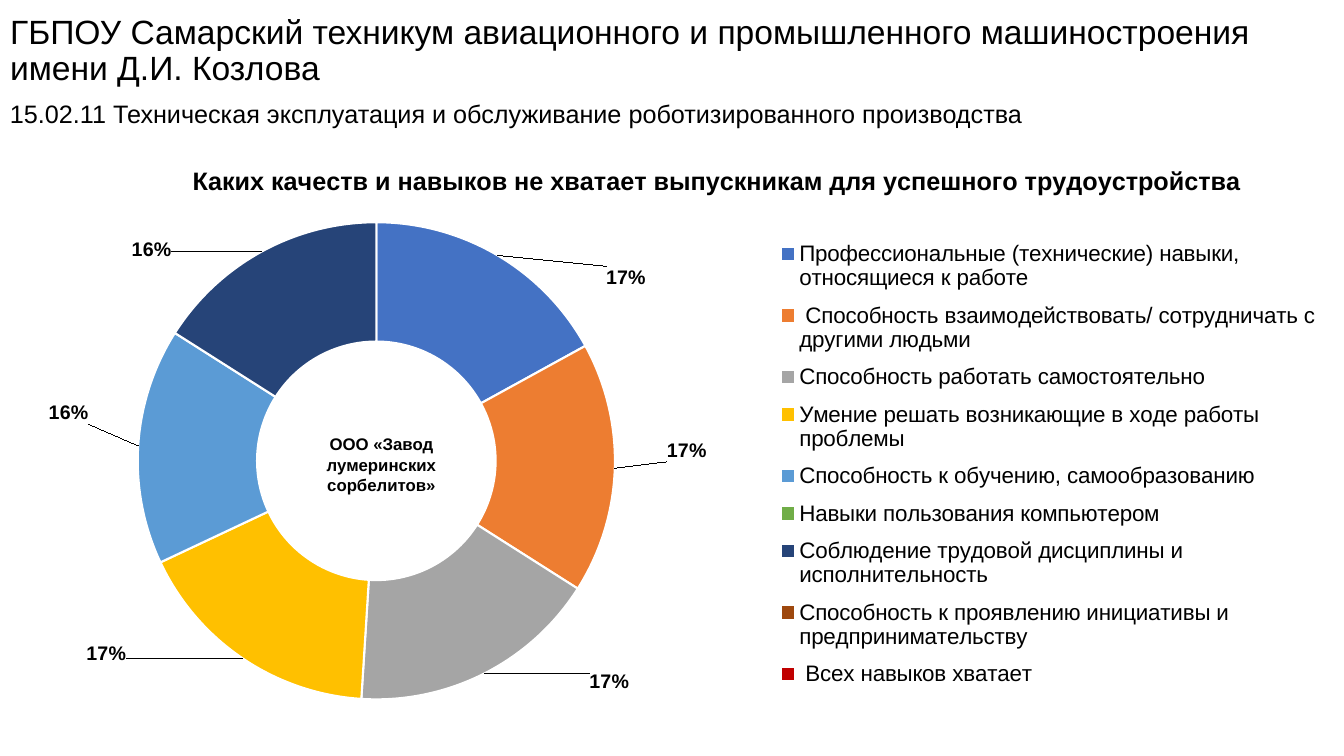
from lxml import etree
from pptx import Presentation
from pptx.chart.data import CategoryChartData
from pptx.dml.color import RGBColor
from pptx.enum.chart import XL_CHART_TYPE, XL_LEGEND_POSITION
from pptx.enum.text import MSO_ANCHOR, MSO_AUTO_SIZE, PP_ALIGN
from pptx.oxml.ns import qn
from pptx.util import Pt

RING = XL_CHART_TYPE.DOUGHNUT
RIGHT = XL_LEGEND_POSITION.RIGHT
MIDDLE, TOP = MSO_ANCHOR.MIDDLE, MSO_ANCHOR.TOP
LEFT, CENTER = PP_ALIGN.LEFT, PP_ALIGN.CENTER
FIXED = MSO_AUTO_SIZE.NONE

HEX = {"ink": "000000", "paper": "FFFFFF"}
WIDE, HIGH = 960, 540

# Skill, share, slice colour, label shift in points (None: no label)
SKILLS = [
    ("Профессиональные (технические) навыки, относящиеся к работе",
     0.17, "4472C4", (113, -21)),
    (" Способность взаимодействовать/ сотрудничать с другими людьми",
     0.17, "ED7D31", (94, -11)),
    ("Способность работать самостоятельно", 0.17, "A5A5A5", (108, 44)),
    ("Умение решать возникающие в ходе работы проблемы",
     0.17, "FFC000", (-121, 32)),
    ("Способность к обучению, самообразованию", 0.16, "5B9BD5", (-92, -26)),
    ("Навыки пользования компьютером", 0, "70AD47", None),
    ("Соблюдение трудовой дисциплины и исполнительность",
     0.16, "264478", (-99, -39)),
    ("Способность к проявлению инициативы и предпринимательству",
     0, "9E480E", None),
    (" Всех навыков хватает", 0, "C00000", None),
]


def style(font, size, bold=False):
    for key, val in {"name": "Arial", "size": Pt(size), "bold": bold}.items():
        setattr(font, key, val)
    font.color.rgb = RGBColor.from_string(HEX["ink"])


def write(shape, text, size, bold=False, align=LEFT, anchor=TOP, space=1.0):
    frame = shape.text_frame
    for key, val in {"word_wrap": True, "auto_size": FIXED,
                     "vertical_anchor": anchor}.items():
        setattr(frame, key, val)
    para = frame.paragraphs[0]
    para.alignment, para.line_spacing = align, space
    run = para.add_run()
    run.text = text
    style(run.font, size, bold)


def arrange(owner, spot, **parts):
    """Give a chart part a manual layout, as child number spot."""
    for old in owner.findall(qn("c:layout")):
        owner.remove(old)
    layout = etree.Element(qn("c:layout"))
    manual = etree.SubElement(layout, qn("c:manualLayout"))
    for tag, val in parts.items():
        etree.SubElement(manual, qn("c:" + tag), val=str(val))
    owner.insert(spot, layout)


def add_head(slide, x, y, w, h):
    title = slide.shapes.title
    for key, val in {"left": x, "top": y, "width": w, "height": h}.items():
        setattr(title, key, Pt(val))
    write(title, "ГБПОУ Самарский техникум авиационного и промышленного "
          "машиностроения имени Д.И. Козлова", 24, anchor=MIDDLE, space=0.9)
    course = slide.shapes.add_textbox(Pt(x), Pt(y + 65.5), Pt(766), Pt(29))
    write(course, "15.02.11 Техническая эксплуатация и обслуживание "
          "роботизированного производства", 18)


def add_ring(slide, x, y, w, h):
    data = CategoryChartData(number_format="0%")
    data.categories = [skill[0] for skill in SKILLS]
    data.add_series("Series 1", [skill[1] for skill in SKILLS])
    chart = slide.shapes.add_chart(
        RING, Pt(x), Pt(y), Pt(w), Pt(h), data).chart
    style(chart.font, 10)
    chart.font.name = "Calibri"

    # Heading and legend
    chart.has_title = True
    run = chart.chart_title.text_frame.paragraphs[0].add_run()
    run.text = ("Каких качеств и навыков не хватает выпускникам "
                "для успешного трудоустройства")
    style(run.font, 18, True)
    chart.has_legend = True
    legend = chart.legend
    legend.position, legend.include_in_layout = RIGHT, False
    style(legend.font, 16)
    edge = {"xMode": "edge", "yMode": "edge"}
    arrange(chart.chart_title._element, 1, **edge, x=0.14, y=0.05)
    arrange(legend._element, 1, **edge, x=0.57, y=0.16, w=0.42, h=0.75)
    plot = chart.plots[0]
    plot.vary_by_categories = True
    arrange(plot._element.getparent(), 0, layoutTarget="inner", **edge,
            x=0.1, y=0.15, w=0.36, h=0.76)

    # Slices and their labels
    series = plot.series[0]
    labels = series.data_labels
    labels.show_value = True
    labels.number_format, labels.number_format_is_linked = "0%", False
    style(labels.font, 14, True)
    for i, (_, _, color, shift) in enumerate(SKILLS):
        point = series.points[i]
        point.format.fill.solid()
        point.format.fill.fore_color.rgb = RGBColor.from_string(color)
        line = point.format.line
        line.color.rgb = RGBColor.from_string(HEX["paper"])
        line.width = Pt(1.5)
        style(point.data_label.font, 14, True)
        label = labels._element.findall(qn("c:dLbl"))[i]
        if shift:
            arrange(label, 1, x=round(shift[0] / w, 3),
                    y=round(shift[1] / h, 3))
        else:
            for part in list(label)[1:]:
                label.remove(part)
            etree.SubElement(label, qn("c:delete"), val="1")


def add_core(slide, x, y, w, h):
    box = slide.shapes.add_textbox(Pt(x), Pt(y), Pt(w), Pt(h))
    write(box, "ООО «Завод лумеринских сорбелитов»", 12, True, CENTER)


def main():
    deck = Presentation()
    deck.slide_width, deck.slide_height = Pt(WIDE), Pt(HIGH)
    slide = deck.slides.add_slide(deck.slide_layouts[5])
    add_ring(slide, 0, 91.5, WIDE, 448.5)
    add_head(slide, 0, 1.5, WIDE, 70.5)
    add_core(slide, 219.5, 306.5, 106, 51)
    deck.save("out.pptx")


if __name__ == "__main__":
    main()
